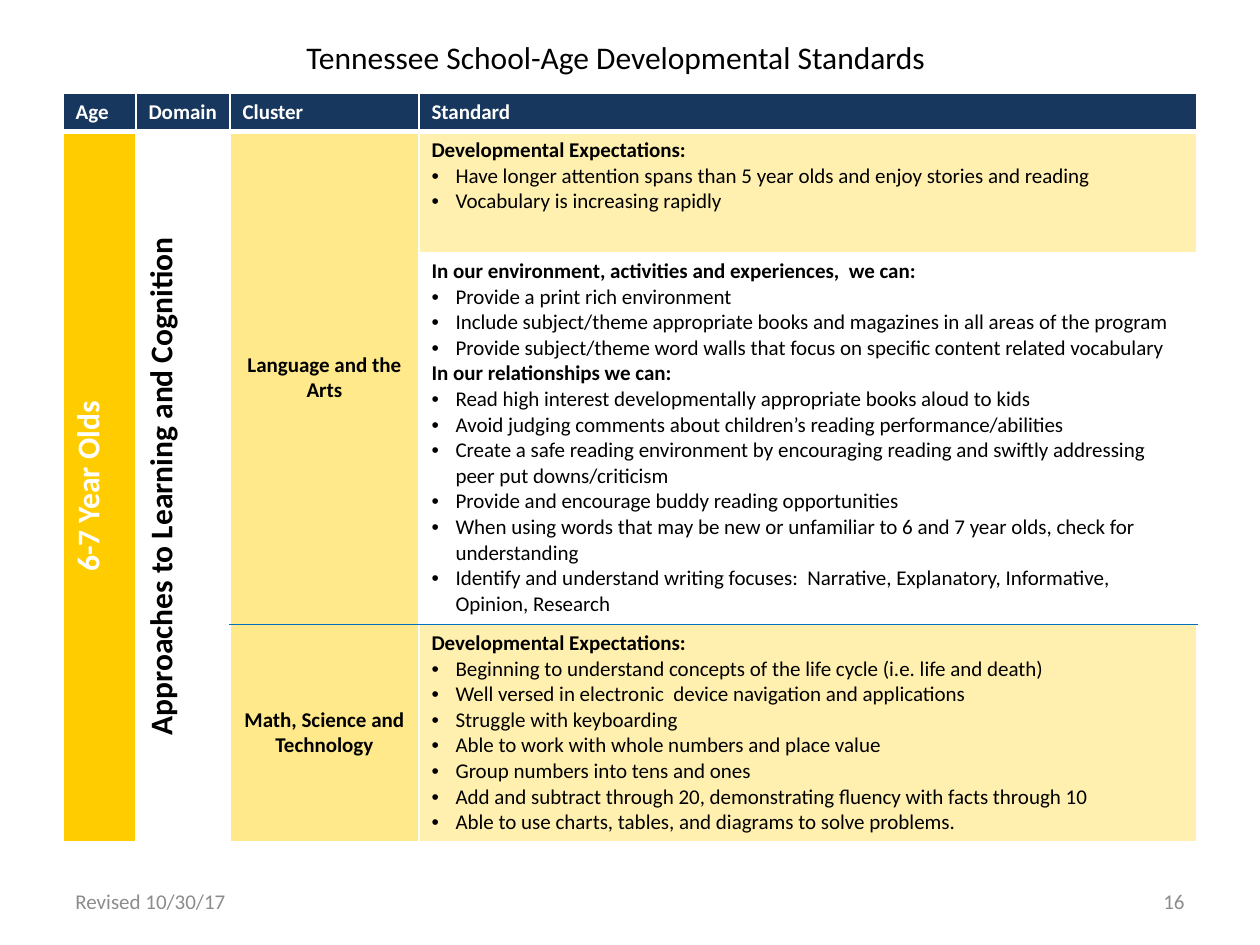
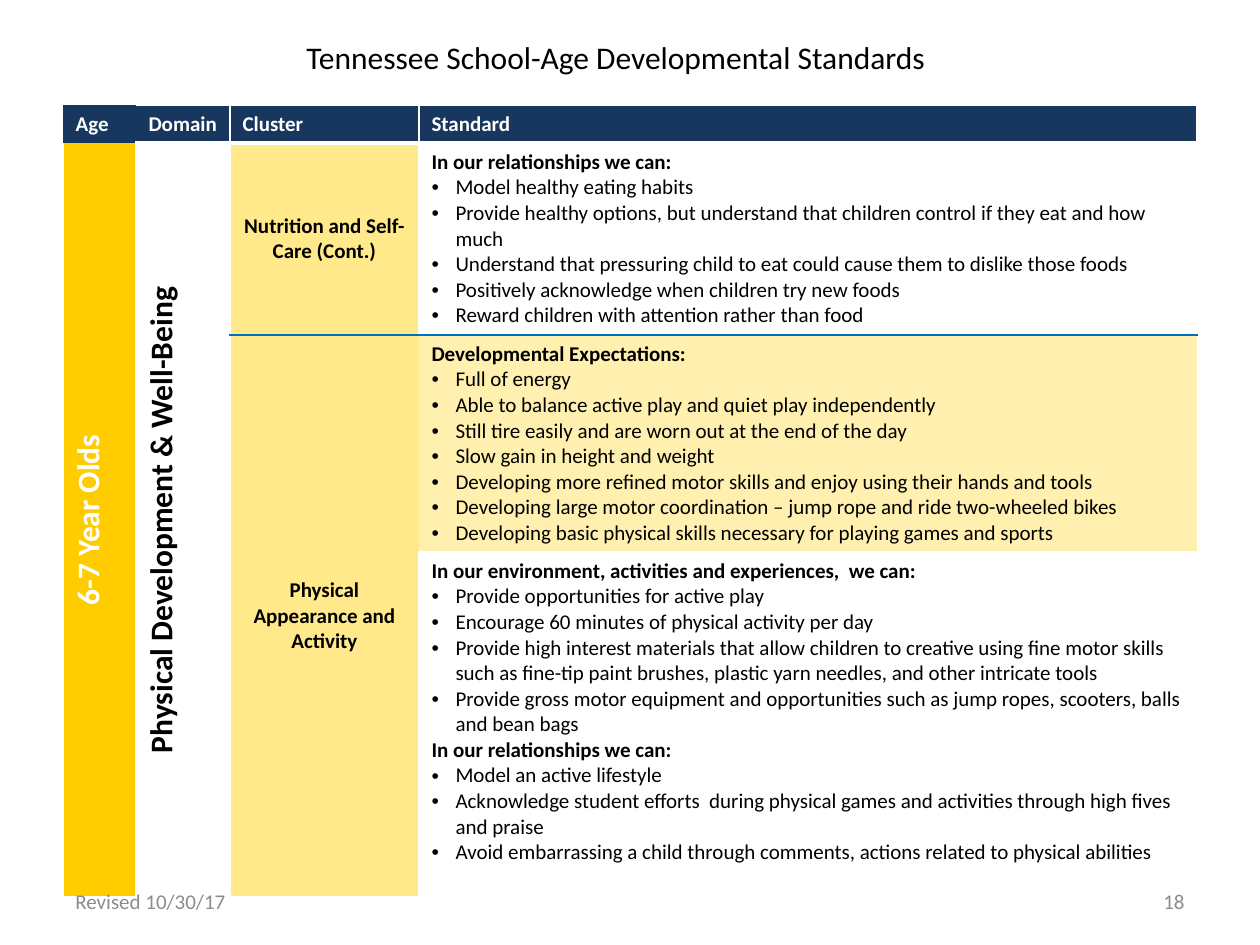
from lxml.etree import SubElement as Sub
from pptx import Presentation
from pptx.dml.color import RGBColor
from pptx.enum.text import MSO_ANCHOR as Anchor, PP_ALIGN as Align
from pptx.oxml.ns import qn
from pptx.util import Pt

SCALE = 914400 / 126
NAVY, GOLD, SAND, CREAM = "17375E", "FFCC00", "FFE98B", "FFF0AF"
WHITE, BLACK, GREY, BLUE = "FFFFFF", "000000", "8C8C8C", "0070C0"
HEADS = ["Age", "Domain", "Cluster", "Standard"]
COLS = [73, 94, 189, 778]
EXPECT = "Developmental Expectations:"
ENVIRON = "In our environment, activities and experiences,  we can:"
RELATE = "In our relationships we can:"


def px(n):
    return round(n * SCALE)


def color(code):
    return RGBColor.from_string(code)


def bullet(para):
    props = para._p.get_or_add_pPr()
    props.set("marL", str(px(24)))
    props.set("indent", str(px(-24)))
    Sub(props, qn("a:buFont"), typeface="Arial")
    Sub(props, qn("a:buChar"), char="•")


def put(frame, text, size=12, ink=BLACK, bold=False, align=Align.LEFT, listed=False):
    """Write one paragraph per line; in a list, lines ending in a colon are headings."""
    for i, line in enumerate(text.split("\n")):
        para = frame.add_paragraph() if i else frame.paragraphs[0]
        para.alignment = align
        head = listed and line.endswith(":")
        if listed and not head:
            bullet(para)
        run = para.add_run()
        run.text = line
        font = run.font
        font.name, font.size, font.bold = "Calibri", Pt(size), bold or head
        font.color.rgb = color(ink)


def edge(cell, side, ink, width=1):
    """Draw one cell border, or clear it when ink is None."""
    line = Sub(cell._tc.get_or_add_tcPr(), qn("a:ln" + side), w=str(Pt(width)))
    if ink:
        Sub(Sub(line, qn("a:solidFill")), qn("a:srgbClr"), val=ink)
    else:
        Sub(line, qn("a:noFill"))


class Deck:
    def __init__(self):
        self.prs = Presentation()
        self.prs.slide_width, self.prs.slide_height = px(1260), px(945)

    def page(self, number):
        self.slide = self.prs.slides.add_slide(self.prs.slide_layouts[6])
        self.number = number

    def label(self, x, y, w, h, text, anchor=Anchor.MIDDLE, **form):
        frame = self.slide.shapes.add_textbox(px(x), px(y), px(w), px(h)).text_frame
        frame.word_wrap = True
        frame.vertical_anchor = anchor
        put(frame, text, **form)

    def frame(self):
        self.label(294, 32, 672, 50, "Tennessee School-Age Developmental Standards",
                   Anchor.TOP, size=18)
        self.label(63, 876, 294, 50, "Revised 10/30/17", ink=GREY)
        self.label(903, 876, 294, 50, str(self.number), ink=GREY, align=Align.RIGHT)

    def cell(self, row, col, text, fill, last=None, anchor=Anchor.TOP, turn=False, **form):
        """Fill a cell, merged down to row `last`, with borders set by its place."""
        last = last or row
        cell = self.grid.cell(row, col)
        if last > row:
            cell.merge(self.grid.cell(last, col))
        bare = self.bare.get((row, col), "")
        ink = dict.fromkeys("LRTB", WHITE)
        if col > 1:
            ink["T"] = BLUE if row == self.split + 1 else WHITE
            ink["B"] = BLUE if last == self.split else WHITE
        for side in "LRTB":
            edge(cell, side, None if side in bare else ink[side],
                 3 if row == 0 and side == "B" else 1)
        cell.fill.solid()
        cell.fill.fore_color.rgb = color(fill)
        cell.vertical_anchor = anchor
        if turn:
            cell._tc.tcPr.set("vert", "vert270")
        put(cell.text_frame, text, **form)

    def table(self, top, rows, domain, groups, bare):
        """Groups are (cluster, list of standards) pairs; a line parts the two groups."""
        self.bare, self.split = bare, len(groups[0][1])
        shape = self.slide.shapes.add_table(len(rows), len(COLS), px(63), px(top),
                                            px(sum(COLS)), px(sum(rows)))
        self.grid = shape.table
        self.grid.first_row = self.grid.horz_banding = False
        for col, wide in zip(self.grid.columns, COLS):
            col.width = px(wide)
        for row, high in zip(self.grid.rows, rows):
            row.height = px(high)
        for i, head in enumerate(HEADS):
            self.cell(0, i, head, NAVY, ink=WHITE, bold=True)
        side = dict(last=len(rows) - 1, turn=True, size=18, bold=True, align=Align.CENTER)
        self.cell(1, 0, "6-7 Year Olds", GOLD, ink=WHITE, **side)
        self.cell(1, 1, domain, WHITE, anchor=Anchor.MIDDLE, **side)
        row = 1
        for name, parts in groups:
            self.cell(row, 2, name, SAND, row + len(parts) - 1, Anchor.MIDDLE,
                      bold=True, align=Align.CENTER)
            for text in parts:
                fill = CREAM if text.startswith(EXPECT) else WHITE
                self.cell(row, 3, text, fill, listed=True)
                row += 1


ARTS = [f"""{EXPECT}
Have longer attention spans than 5 year olds and enjoy stories and reading
Vocabulary is increasing rapidly""", f"""{ENVIRON}
Provide a print rich environment
Include subject/theme appropriate books and magazines in all areas of the program
Provide subject/theme word walls that focus on specific content related vocabulary
{RELATE}
Read high interest developmentally appropriate books aloud to kids
Avoid judging comments about children’s reading performance/abilities
Create a safe reading environment by encouraging reading and swiftly addressing peer put downs/criticism
Provide and encourage buddy reading opportunities
When using words that may be new or unfamiliar to 6 and 7 year olds, check for understanding
Identify and understand writing focuses:  Narrative, Explanatory, Informative, Opinion, Research"""]

MATH = [f"""{EXPECT}
Beginning to understand concepts of the life cycle (i.e. life and death)
Well versed in electronic  device navigation and applications
Struggle with keyboarding
Able to work with whole numbers and place value
Group numbers into tens and ones
Add and subtract through 20, demonstrating fluency with facts through 10
Able to use charts, tables, and diagrams to solve problems."""]

FOOD = [f"""{RELATE}
Model healthy eating habits
Provide healthy options, but understand that children control if they eat and how much
Understand that pressuring child to eat could cause them to dislike those foods
Positively acknowledge when children try new foods
Reward children with attention rather than food"""]

BODY = [f"""{EXPECT}
Full of energy
Able to balance active play and quiet play independently
Still tire easily and are worn out at the end of the day
Slow gain in height and weight
Developing more refined motor skills and enjoy using their hands and tools
Developing large motor coordination – jump rope and ride two-wheeled bikes
Developing basic physical skills necessary for playing games and sports""", f"""{ENVIRON}
Provide opportunities for active play
Encourage 60 minutes of physical activity per day
Provide high interest materials that allow children to creative using fine motor skills  such as fine-tip paint brushes, plastic yarn needles, and other intricate tools
Provide gross motor equipment and opportunities such as jump ropes, scooters, balls and bean bags
{RELATE}
Model an active lifestyle
Acknowledge student efforts  during physical games and activities through high fives and praise
Avoid embarrassing a child through comments, actions related to physical abilities"""]


def main():
    deck = Deck()
    deck.page(16)
    deck.table(93, [38, 121, 372, 216], "Approaches to Learning and Cognition",
               [("Language and the Arts", ARTS), ("Math, Science and Technology", MATH)], {})
    deck.frame()

    deck.page(18)
    deck.table(105, [38, 192, 217, 345], "Physical Development & Well-Being",
               [("Nutrition and Self-Care (Cont.)", FOOD),
                ("Physical Appearance and Activity", BODY)],
               {(0, 0): "LRTB", (0, 1): "L", (1, 0): "T", (2, 2): "R", (2, 3): "LR"})
    deck.frame()
    deck.prs.save("out.pptx")


if __name__ == "__main__":
    main()
